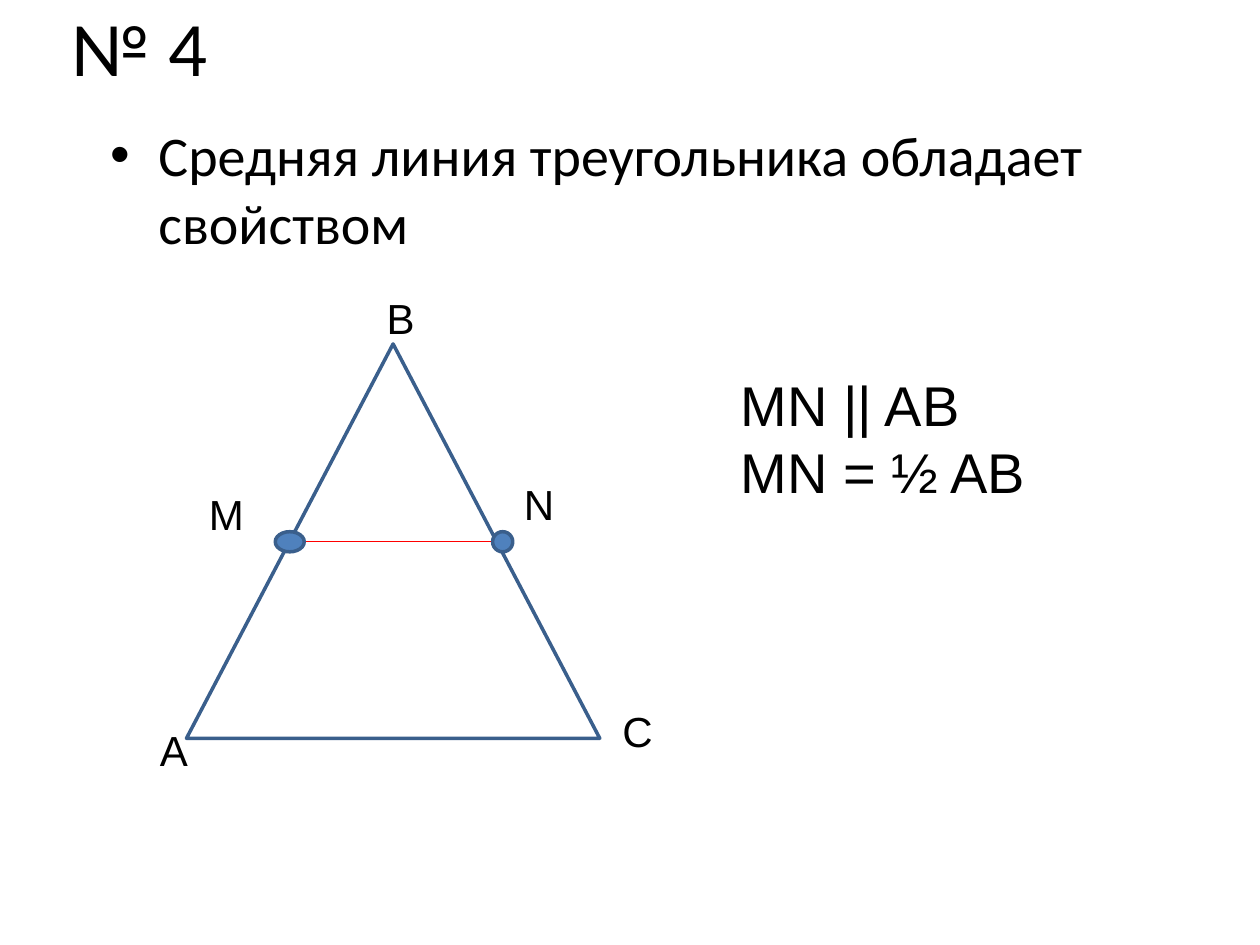
from dataclasses import dataclass

from lxml import etree
from pptx import Presentation
from pptx.dml.color import RGBColor
from pptx.enum import shapes, text
from pptx.oxml import ns
from pptx.util import Inches, Pt


@dataclass(frozen=True)
class Theme:
    ink: str = "000000"
    dot: str = "4F81BD"
    outline: str = "3A5F8C"
    midline: str = "FF0000"
    heading_font: str = "Calibri"
    label_font: str = "Arial"
    title_size: int = 44
    body_size: int = 32
    label_size: int = 24


THEME = Theme()
DOT_HEIGHT = 0.16
MIDLINE_Y = 4.3


def rgb(value):
    return RGBColor.from_string(value)


def place(shape, left, top, width, height):
    shape.left, shape.top = Inches(left), Inches(top)
    shape.width, shape.height = Inches(width), Inches(height)


def write(tf, content, *, size, font=THEME.label_font,
          anchor=text.MSO_ANCHOR.TOP, bullet=False):
    """Fill a text frame, one paragraph for each line of content."""
    tf.word_wrap = True
    tf.auto_size = text.MSO_AUTO_SIZE.NONE
    tf.vertical_anchor = anchor
    for i, line in enumerate(content.split("\n")):
        p = tf.paragraphs[0] if i == 0 else tf.add_paragraph()
        p.alignment = text.PP_ALIGN.LEFT
        if bullet:
            add_bullet(p)
        r = p.add_run()
        r.text = line
        r.font.name, r.font.size = font, Pt(size)
        r.font.color.rgb = rgb(THEME.ink)


def add_bullet(p, indent=0.38):
    pPr = p._p.get_or_add_pPr()
    pPr.set("marL", str(Inches(indent)))
    pPr.set("indent", str(-Inches(indent)))
    etree.SubElement(pPr, ns.qn("a:buFont")).set("typeface", THEME.label_font)
    etree.SubElement(pPr, ns.qn("a:buChar")).set("char", "•")


def add_text(s, content, left, top, width, height, **style):
    box = s.shapes.add_textbox(*map(Inches, (left, top, width, height)))
    write(box.text_frame, content, **style)


def add_figure(s, kind, left, top, width, height, fill=None):
    sp = s.shapes.add_shape(kind, *map(Inches, (left, top, width, height)))
    sp.shadow.inherit = False
    if fill:
        sp.fill.solid()
        sp.fill.fore_color.rgb = rgb(fill)
    else:
        sp.fill.background()
    sp.line.color.rgb = rgb(THEME.outline)
    sp.line.width = Pt(2)


def add_dot(s, center_x, width):
    """Mark a point on the midline."""
    add_figure(s, shapes.MSO_SHAPE.OVAL, center_x - width / 2,
               MIDLINE_Y - DOT_HEIGHT / 2, width, DOT_HEIGHT, THEME.dot)


def add_midline(s, start_x, end_x):
    line = s.shapes.add_connector(
        shapes.MSO_CONNECTOR.STRAIGHT,
        *map(Inches, (start_x, MIDLINE_Y, end_x, MIDLINE_Y)))
    line.line.color.rgb = rgb(THEME.midline)
    line.line.width = Pt(0.75)
    etree.SubElement(line._element.spPr, ns.qn("a:effectLst"))


def add_triangle(s):
    add_figure(s, shapes.MSO_SHAPE.ISOSCELES_TRIANGLE, 1.48, 2.73, 3.28, 3.13)
    add_midline(s, 2.3, 3.95)
    add_dot(s, 3.99, DOT_HEIGHT)
    add_dot(s, 2.3, 0.23)
    labels = [("M", 1.56, 3.83), ("N", 4.06, 3.75), ("B", 2.97, 2.27),
              ("A", 1.17, 5.7), ("C", 4.84, 5.55)]
    for name, left, top in labels:
        add_text(s, name, left, top, 0.55, 0.5, size=THEME.label_size)


def main():
    prs = Presentation()
    prs.slide_width, prs.slide_height = Inches(10), Inches(7.5)
    s = prs.slides.add_slide(prs.slide_layouts.get_by_name("Title Only"))

    place(s.shapes.title, 0.47, 0, 9, 0.72)
    write(s.shapes.title.text_frame, "№ 4", size=THEME.title_size,
          font=THEME.heading_font, anchor=text.MSO_ANCHOR.MIDDLE)
    add_text(s, "Средняя линия треугольника обладает свойством",
             0.78, 0.91, 8.44, 5.81, size=THEME.body_size,
             font=THEME.heading_font, bullet=True)
    add_triangle(s)
    add_text(s, "MN || AB\nMN = ½ AB", 5.78, 2.89, 3.2, 1.18,
             size=THEME.body_size)

    prs.save("out.pptx")


if __name__ == "__main__":
    main()
